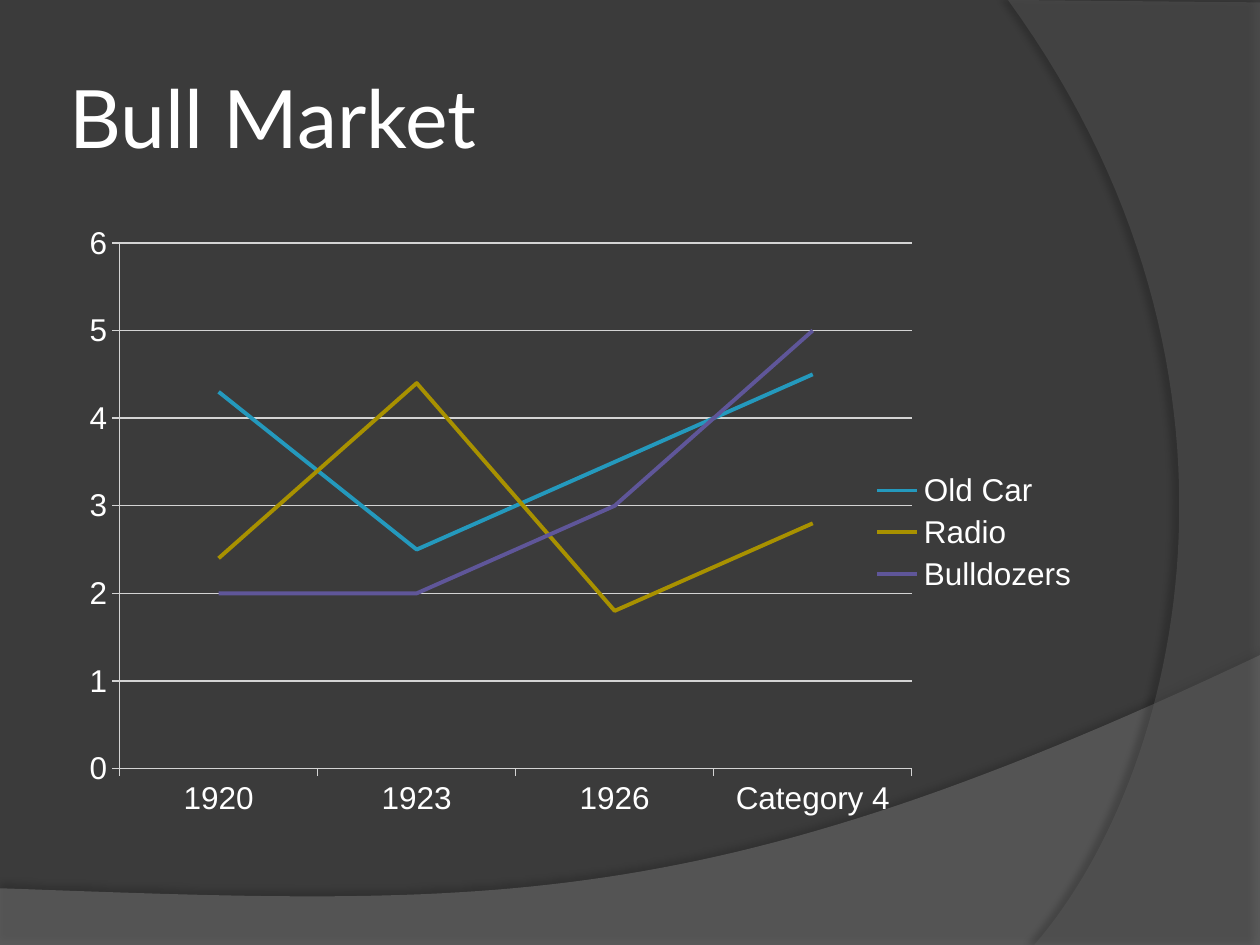
from dataclasses import dataclass

from lxml.etree import SubElement
from pptx import Presentation
from pptx.chart.data import CategoryChartData
from pptx.dml.color import RGBColor
from pptx.enum.chart import XL_CHART_TYPE as ChartType, XL_LEGEND_POSITION as LegendPosition
from pptx.enum.chart import XL_MARKER_STYLE as MarkerStyle, XL_TICK_MARK as TickMark
from pptx.enum.text import MSO_ANCHOR as Anchor, PP_ALIGN as Align
from pptx.oxml import parse_xml
from pptx.oxml.ns import nsdecls, qn
from pptx.util import Pt

Point = tuple[float, float]


@dataclass(frozen=True)
class Theme:
    background: str = "3B3B3B"
    text: str = "FFFFFF"
    grid: str = "D4D4D4"
    shadow: str = "000000"
    title_font: str = "Lato"
    chart_font: str = "Arial"
    title_size: float = 46
    chart_size: float = 18
    grid_width: float = 0.75
    series_width: float = 2.25


@dataclass(frozen=True)
class Swoosh:
    corners: tuple[Point, ...]
    curve: tuple[Point, Point, Point, Point]
    color: str
    opacity: int
    shadow_opacity: int
    shadow_distance: float
    shadow_angle: int


@dataclass(frozen=True)
class Series:
    name: str
    values: tuple[float, ...]
    color: str


THEME = Theme()
CATEGORIES = ("1920", "1923", "1926", "Category 4")
SERIES = (
    Series("Old Car", (4.3, 2.5, 3.5, 4.5), "2499BD"),
    Series("Radio", (2.4, 4.4, 1.8, 2.8), "A89100"),
    Series("Bulldozers", (2, 2, 3, 5), "5F5699"),
)
SWOOSHES = (
    Swoosh(((0, 507.6), (0, 540.5), (720, 540.5)),
           ((720, 374.4), (402.5, 524.9), (281.5, 517.7), (0, 507.6)),
           "7F7F7F", 45, 35, 3.5, 270),
    Swoosh(((720, 1.4), (720, 540)),
           ((591, 540), (673, 445.7), (733, 216), (576, 0)),
           "5E5E5E", 40, 45, 4, 180),
)
PLOT_LAYOUT = {"x": 0.055, "y": 0.036, "w": 0.77, "h": 0.843}


def rgb(color: str) -> RGBColor:
    """Turn a hex string into a colour."""
    return RGBColor.from_string(color)


def curve_points(curve: tuple[Point, ...], steps: int = 60) -> list[Point]:
    """Sample a cubic Bezier curve at equal parameter steps."""
    points = []
    for step in range(steps + 1):
        t = step / steps
        weights = ((1 - t) ** 3, 3 * t * (1 - t) ** 2, 3 * t * t * (1 - t), t ** 3)
        points.append(tuple(sum(w * p[axis] for w, p in zip(weights, curve)) for axis in (0, 1)))
    return points


def draw_swoosh(slide, swoosh: Swoosh) -> None:
    """Draw a translucent curved band with a soft shadow."""
    outline = [(Pt(x), Pt(y)) for x, y in (*swoosh.corners, *curve_points(swoosh.curve))]
    builder = slide.shapes.build_freeform(*outline[0])
    builder.add_line_segments(outline[1:], close=True)
    shape = builder.convert_to_shape()
    shape.fill.solid()
    shape.fill.fore_color.rgb = rgb(swoosh.color)
    shape.line.fill.background()
    shape.shadow.inherit = False
    properties = shape.element.spPr
    fill_color = properties.find(qn("a:solidFill")).find(qn("a:srgbClr"))
    SubElement(fill_color, qn("a:alpha"), val=str(swoosh.opacity * 1000))
    properties.find(qn("a:effectLst")).append(parse_xml(
        f'<a:outerShdw {nsdecls("a")} blurRad="{Pt(4)}" dist="{Pt(swoosh.shadow_distance)}" '
        f'dir="{swoosh.shadow_angle * 60000}" algn="ctr" rotWithShape="0">'
        f'<a:srgbClr val="{THEME.shadow}"><a:alpha val="{swoosh.shadow_opacity * 1000}"/>'
        f'</a:srgbClr></a:outerShdw>'))


def write_title(slide, text: str) -> None:
    """Place and format the title placeholder."""
    title = slide.shapes.title
    title.left, title.top, title.width, title.height = Pt(36), Pt(21.6), Pt(588), Pt(90)
    frame = title.text_frame
    frame.text = text
    frame.vertical_anchor = Anchor.MIDDLE
    frame.margin_left = frame.margin_right = frame.margin_top = frame.margin_bottom = Pt(3.6)
    paragraph = frame.paragraphs[0]
    paragraph.alignment = Align.LEFT
    font = paragraph.runs[0].font
    font.name, font.size = THEME.title_font, Pt(THEME.title_size)
    font.color.rgb = rgb(THEME.text)


def style_line(line, color: str, width: float) -> None:
    """Set the colour and width of a chart line."""
    line.color.rgb = rgb(color)
    line.width = Pt(width)


def set_plot_layout(chart) -> None:
    """Fix the inner plot area as fractions of the chart."""
    plot_area = chart.element.chart.plotArea
    for layout in plot_area.findall(qn("c:layout")):
        plot_area.remove(layout)
    modes = "".join(f'<c:{axis}Mode val="edge"/>' for axis in "xy")
    sizes = "".join(f'<c:{key} val="{value}"/>' for key, value in PLOT_LAYOUT.items())
    plot_area.insert(0, parse_xml(
        f'<c:layout {nsdecls("c")}><c:manualLayout><c:layoutTarget val="inner"/>'
        f'{modes}{sizes}</c:manualLayout></c:layout>'))


def draw_chart(slide) -> None:
    """Add the line chart with its axes and legend."""
    data = CategoryChartData()
    data.categories = CATEGORIES
    for entry in SERIES:
        data.add_series(entry.name, entry.values)
    chart = slide.shapes.add_chart(
        ChartType.LINE, Pt(36), Pt(126), Pt(588), Pt(356.4), data).chart
    chart.has_title = False
    chart.font.name, chart.font.size = THEME.chart_font, Pt(THEME.chart_size)
    chart.font.color.rgb = rgb(THEME.text)
    chart.has_legend = True
    chart.legend.position = LegendPosition.RIGHT
    chart.legend.include_in_layout = False
    for axis in (chart.category_axis, chart.value_axis):
        axis.major_tick_mark = TickMark.OUTSIDE
        axis.minor_tick_mark = TickMark.NONE
        style_line(axis.format.line, THEME.grid, THEME.grid_width)
    value_axis = chart.value_axis
    value_axis.minimum_scale, value_axis.maximum_scale, value_axis.major_unit = 0, 6, 1
    value_axis.has_major_gridlines = True
    style_line(value_axis.major_gridlines.format.line, THEME.grid, THEME.grid_width)
    plot = chart.plots[0]
    plot.vary_by_categories = False
    for series, entry in zip(plot.series, SERIES):
        series.smooth = False
        series.marker.style = MarkerStyle.NONE
        style_line(series.format.line, entry.color, THEME.series_width)
    set_plot_layout(chart)


def main() -> None:
    """Build and save the slide."""
    presentation = Presentation()
    presentation.slide_width, presentation.slide_height = Pt(720), Pt(540)
    slide = presentation.slides.add_slide(presentation.slide_layouts[5])
    slide.background.fill.solid()
    slide.background.fill.fore_color.rgb = rgb(THEME.background)
    for swoosh in SWOOSHES:
        draw_swoosh(slide, swoosh)
    write_title(slide, "Bull Market")
    draw_chart(slide)
    presentation.save("out.pptx")


if __name__ == "__main__":
    main()
